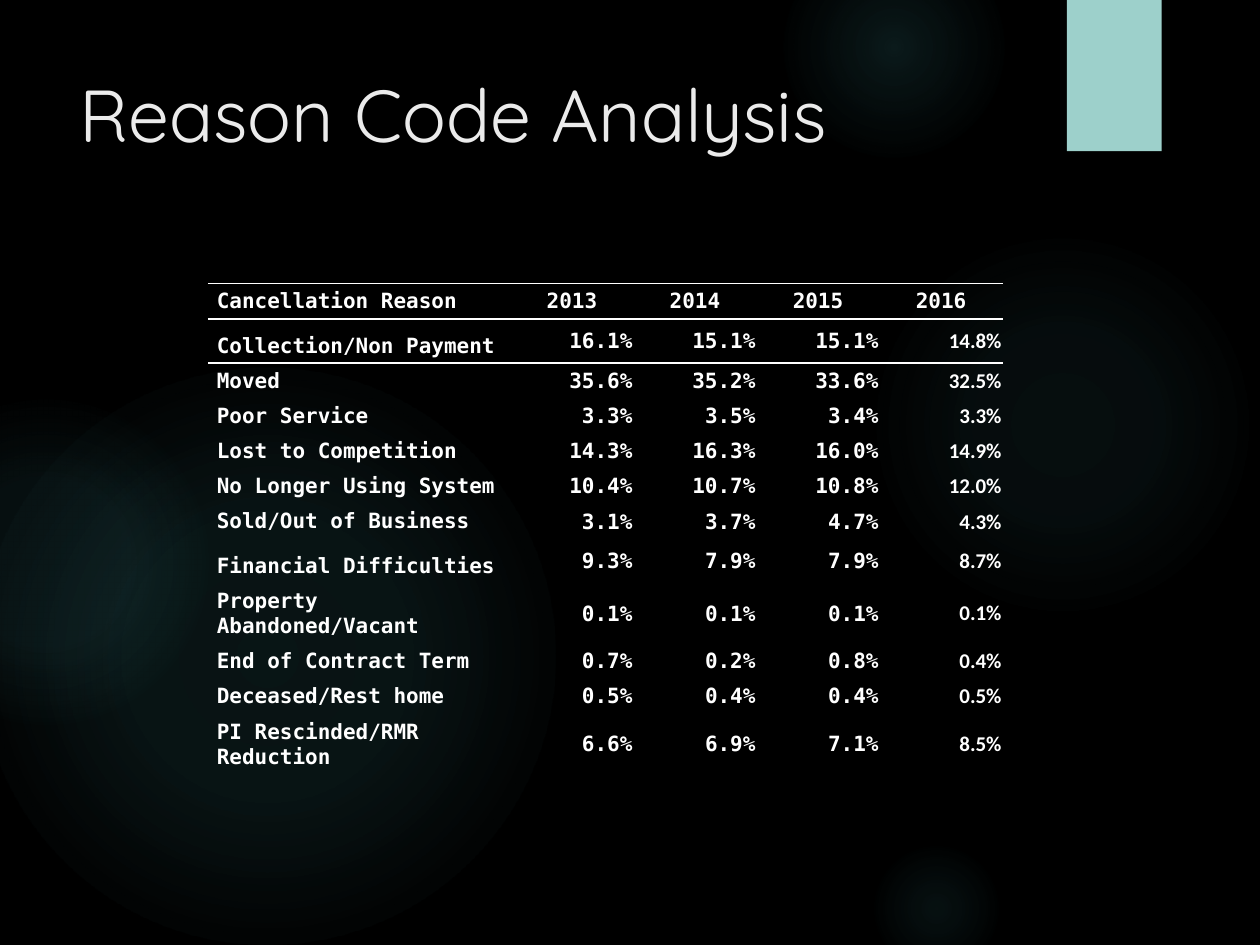
import dataclasses

import lxml.etree
import pptx
import pptx.dml.color
import pptx.enum.shapes
import pptx.enum.text
import pptx.oxml
import pptx.oxml.ns
import pptx.util

Cm = pptx.util.Cm
Pt = pptx.util.Pt
Anchor = pptx.enum.text.MSO_ANCHOR
Align = pptx.enum.text.PP_ALIGN
ShapeType = pptx.enum.shapes.MSO_SHAPE
qualified = pptx.oxml.ns.qn

COLOURS: dict[str, str] = {
    "background": "000000",
    "glow": "50B9C1",
    "tab": "9DD0CB",
    "title": "EBEBEB",
    "table": "FFFFFF",
    "shadow": "000000",
}
MONO = "DejaVu Sans Mono"
NO_STYLE = "{2D5ABB26-0587-4C30-8999-92F81FD0307C}"


@dataclasses.dataclass(frozen=True)
class Glow:
    left: float
    top: float
    size: float
    centre_alpha: int
    middle_alpha: int
    fade_stop: int


@dataclasses.dataclass(frozen=True)
class Reason:
    name: str
    shares: tuple[str, ...]
    height: float = 0.7


GLOWS = [
    Glow(17.5, 4.65, 7.82, 7, 6, 69),
    Glow(15.8, -1.27, 4.45, 14, 7, 73),
    Glow(17.5, 16.94, 2.74, 9, 5, 66),
    Glow(-0.43, 7.42, 11.63, 11, 10, 75),
    Glow(-2.34, 8.05, 6.55, 8, 8, 72),
]
YEARS = ("2013", "2014", "2015", "2016")
REASONS = [
    Reason("Collection/Non Payment", ("16.1%", "15.1%", "15.1%", "14.8%"), 0.89),
    Reason("Moved", ("35.6%", "35.2%", "33.6%", "32.5%")),
    Reason("Poor Service", ("3.3%", "3.5%", "3.4%", "3.3%")),
    Reason("Lost to Competition", ("14.3%", "16.3%", "16.0%", "14.9%")),
    Reason("No Longer Using System", ("10.4%", "10.7%", "10.8%", "12.0%")),
    Reason("Sold/Out of Business", ("3.1%", "3.7%", "4.7%", "4.3%")),
    Reason("Financial Difficulties", ("9.3%", "7.9%", "7.9%", "8.7%"), 0.89),
    Reason("Property Abandoned/Vacant", ("0.1%", "0.1%", "0.1%", "0.1%"), 0.76),
    Reason("End of Contract Term", ("0.7%", "0.2%", "0.8%", "0.4%")),
    Reason("Deceased/Rest home", ("0.5%", "0.4%", "0.4%", "0.5%")),
    Reason("PI Rescinded/RMR Reduction", ("6.6%", "6.9%", "7.1%", "8.5%"), 1.2),
]


def colour(name: str) -> pptx.dml.color.RGBColor:
    return pptx.dml.color.RGBColor.from_string(COLOURS[name])


def write_text(text_frame, text: str, *, size: float, font: str, color: str,
               bold: bool = False, align=Align.LEFT) -> None:
    paragraph = text_frame.paragraphs[0]
    paragraph.alignment = align
    run = paragraph.add_run()
    run.text = text
    run.font.size = Pt(size)
    run.font.name = font
    run.font.bold = bold
    run.font.color.rgb = colour(color)


def add_plain_shape(slide, kind, left: float, top: float, width: float, height: float):
    shape = slide.shapes.add_shape(kind, Cm(left), Cm(top), Cm(width), Cm(height))
    shape.shadow.inherit = False
    shape.line.fill.background()
    return shape


def draw_glow(slide, glow: Glow) -> None:
    shape = add_plain_shape(slide, ShapeType.OVAL, glow.left, glow.top, glow.size, glow.size)
    stops = [(0, glow.centre_alpha), (36, glow.middle_alpha), (glow.fade_stop, 0)]
    stop_xml = "".join(
        f'<a:gs pos="{position * 1000}"><a:srgbClr val="{COLOURS["glow"]}">'
        f'<a:alpha val="{alpha * 1000}"/></a:srgbClr></a:gs>'
        for position, alpha in stops
    )
    gradient = pptx.oxml.parse_xml(
        f'<a:gradFill {pptx.oxml.ns.nsdecls("a")} rotWithShape="1">'
        f'<a:gsLst>{stop_xml}</a:gsLst><a:path path="circle">'
        '<a:fillToRect l="50000" t="50000" r="50000" b="50000"/></a:path></a:gradFill>'
    )
    shape._element.spPr.find(qualified("a:prstGeom")).addnext(gradient)


def draw_tab(slide) -> None:
    shape = add_plain_shape(slide, ShapeType.RECTANGLE, 21.51, 0, 1.91, 3.05)
    shape.fill.solid()
    shape.fill.fore_color.rgb = colour("tab")
    effects = shape._element.spPr.find(qualified("a:effectLst"))
    shadow = lxml.etree.SubElement(
        effects, qualified("a:outerShdw"), blurRad=str(Pt(3)), dist=str(Pt(2)),
        dir="5400000", rotWithShape="0")
    shade = lxml.etree.SubElement(shadow, qualified("a:srgbClr"), val=COLOURS["shadow"])
    lxml.etree.SubElement(shade, qualified("a:alpha"), val="45000")


def draw_title(slide) -> None:
    box = slide.shapes.add_textbox(Cm(1.35), Cm(1.27), Cm(19.61), Cm(3.89))
    box.text_frame.word_wrap = True
    write_text(box.text_frame, "Reason Code Analysis", size=42, font="Quicksand", color="title")


def add_borders(cell, sides: tuple[str, ...]) -> None:
    properties = cell._tc.get_or_add_tcPr()
    for index, side in enumerate(sides):
        line = lxml.etree.Element(qualified(f"a:ln{side}"), w=str(Pt(1)))
        fill = lxml.etree.SubElement(line, qualified("a:solidFill"))
        lxml.etree.SubElement(fill, qualified("a:srgbClr"), val=COLOURS["table"])
        properties.insert(index, line)


def fill_cell(cell, text: str, *, padded: bool, anchor, align, font: str = MONO,
              borders: tuple[str, ...] = ()) -> None:
    cell.fill.background()
    cell.vertical_anchor = anchor
    cell.margin_left = cell.margin_right = Cm(0.18 if padded else 0.02)
    cell.margin_top = Cm(0.1 if padded else 0.02)
    cell.margin_bottom = Cm(0.1 if padded else 0)
    write_text(cell.text_frame, text, size=12, font=font, color="table", bold=True, align=align)
    add_borders(cell, borders)


def draw_table(slide) -> None:
    widths = [6.1] + [2.48] * len(YEARS)
    heights = [0.7] + [reason.height for reason in REASONS]
    frame = slide.shapes.add_table(
        len(heights), len(widths), Cm(4.19), Cm(5.72), Cm(sum(widths)), Cm(sum(heights)))
    table = frame.table
    table.first_row = table.horz_banding = False
    table._tbl.tblPr.find(qualified("a:tableStyleId")).text = NO_STYLE
    for column, width in zip(table.columns, widths):
        column.width = Cm(width)
    for row, height in zip(table.rows, heights):
        row.height = Cm(height)

    fill_cell(table.cell(0, 0), "Cancellation Reason", padded=True, anchor=Anchor.BOTTOM,
              align=Align.LEFT, borders=("T", "B"))
    for column_index, year in enumerate(YEARS, start=1):
        fill_cell(table.cell(0, column_index), year, padded=True, anchor=Anchor.MIDDLE,
                  align=Align.CENTER, borders=("T", "B"))
    for row_index, reason in enumerate(REASONS, start=1):
        borders = ("T",) if row_index == 1 else ()
        fill_cell(table.cell(row_index, 0), reason.name, padded=True, anchor=Anchor.BOTTOM,
                  align=Align.LEFT, borders=borders)
        for column_index, share in enumerate(reason.shares, start=1):
            fill_cell(table.cell(row_index, column_index), share, padded=False,
                      anchor=Anchor.MIDDLE, align=Align.RIGHT, borders=borders,
                      font="Calibri" if column_index == len(YEARS) else MONO)


def main() -> None:
    presentation = pptx.Presentation()
    presentation.slide_width = Cm(25.4)
    presentation.slide_height = Cm(19.05)
    slide = presentation.slides.add_slide(presentation.slide_layouts[6])
    slide.background.fill.solid()
    slide.background.fill.fore_color.rgb = colour("background")
    for glow in GLOWS:
        draw_glow(slide, glow)
    draw_tab(slide)
    draw_title(slide)
    draw_table(slide)
    presentation.save("out.pptx")


if __name__ == "__main__":
    main()
